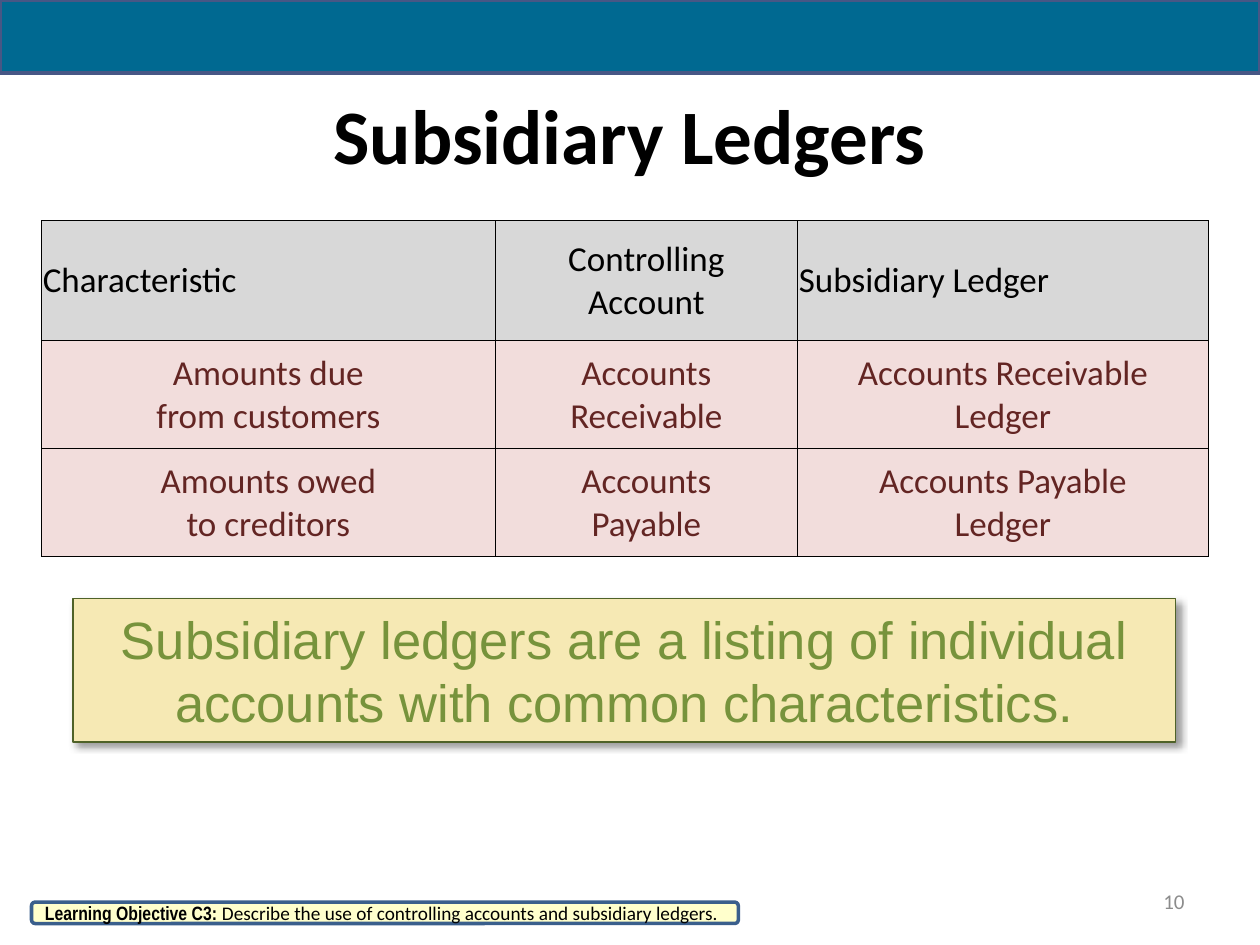
from lxml import etree
from pptx import Presentation
from pptx.dml.color import RGBColor
from pptx.enum.shapes import MSO_SHAPE
from pptx.enum.text import MSO_ANCHOR, PP_ALIGN
from pptx.oxml import parse_xml
from pptx.oxml.ns import nsdecls, qn
from pptx.util import Inches, Pt

RECTANGLE, ROUNDED = MSO_SHAPE.RECTANGLE, MSO_SHAPE.ROUNDED_RECTANGLE
LEFT, CENTER, RIGHT = PP_ALIGN.LEFT, PP_ALIGN.CENTER, PP_ALIGN.RIGHT
MIDDLE = MSO_ANCHOR.MIDDLE

BLACK = RGBColor(0x00, 0x00, 0x00)
GRAY = RGBColor(0x8C, 0x8C, 0x8C)
TEAL = RGBColor(0x00, 0x69, 0x91)
INDIGO = RGBColor(0x47, 0x57, 0x85)
BLUE = RGBColor(0x3A, 0x5F, 0x8C)
SILVER = RGBColor(0xD8, 0xD8, 0xD8)
PINK = RGBColor(0xF2, 0xDD, 0xDC)
MAROON = RGBColor(0x63, 0x25, 0x23)
SAND = RGBColor(0xF6, 0xE9, 0xB4)
OLIVE = RGBColor(0x4F, 0x62, 0x28)
GREEN = RGBColor(0x77, 0x93, 0x3C)
CREAM = RGBColor(0xFF, 0xFF, 0xCC)

LEDGER_ROWS = [
    [["Characteristic"], ["Controlling", "Account"], ["Subsidiary Ledger"]],
    [["Amounts due", "from customers"], ["Accounts", "Receivable"],
     ["Accounts Receivable", "Ledger"]],
    [["Amounts owed", "to creditors"], ["Accounts", "Payable"],
     ["Accounts Payable", "Ledger"]],
]


class SlideBuilder:
    font_name = "Calibri"
    unit = Inches(0.1)

    def __init__(self, slide):
        self.slide = slide

    def span(self, *units):
        return [round(value * self.unit) for value in units]

    def style(self, font, size, color, bold=False, name=None):
        font.name = name or self.font_name
        font.size = Pt(size)
        font.color.rgb = color
        font.bold = bold

    def frame(self, text_frame, margins):
        text_frame.word_wrap = True
        text_frame.vertical_anchor = MIDDLE
        (text_frame.margin_left, text_frame.margin_top,
         text_frame.margin_right, text_frame.margin_bottom) = self.span(*margins)
        return text_frame.paragraphs[0]

    def text(self, area, words, size, color, align, bold=False):
        box = self.slide.shapes.add_textbox(*self.span(*area))
        paragraph = self.frame(box.text_frame, (1, 0.5, 1, 0.5))
        paragraph.text = words
        paragraph.alignment = align
        self.style(paragraph.font, size, color, bold)

    def panel(self, kind, area, fill, line, width):
        shape = self.slide.shapes.add_shape(kind, *self.span(*area))
        shape.shadow.inherit = False
        shape.fill.solid()
        shape.fill.fore_color.rgb = fill
        shape.line.color.rgb = line
        shape.line.width = Pt(width)
        return shape

    def callout(self, area, words):
        shape = self.panel(RECTANGLE, area, SAND, OLIVE, 1)
        effects = shape._element.spPr.find(qn("a:effectLst"))
        shadow = etree.SubElement(
            effects, qn("a:outerShdw"), blurRad=str(Pt(4)), dist=str(Pt(3)),
            dir="2700000", algn="tl", rotWithShape="0")
        color = etree.SubElement(shadow, qn("a:srgbClr"), val=str(BLACK))
        etree.SubElement(color, qn("a:alpha"), val="40000")
        paragraph = self.frame(shape.text_frame, (1, 0.5, 1, 0.5))
        paragraph.text = words
        paragraph.alignment = CENTER
        self.style(paragraph.font, 30, GREEN, name="Arial")

    def objective(self, area, label, words):
        shape = self.panel(ROUNDED, area, CREAM, BLUE, 2)
        paragraph = self.frame(shape.text_frame, (1, 0, 0, 0))
        paragraph.alignment = LEFT
        for content, bold, name in ((label, True, "Arial Narrow"), (words, False, None)):
            run = paragraph.add_run()
            run.text = content
            self.style(run.font, 11, BLACK, bold, name)

    def border(self, cell):
        properties = cell._tc.get_or_add_tcPr()
        for side in ("lnL", "lnR", "lnT", "lnB"):
            properties.append(parse_xml(
                f'<a:{side} {nsdecls("a")} w="{Pt(0.5)}"><a:solidFill>'
                f'<a:srgbClr val="{BLACK}"/></a:solidFill></a:{side}>'))

    def cell(self, cell, lines, fill, color):
        self.border(cell)
        cell.fill.solid()
        cell.fill.fore_color.rgb = fill
        cell.vertical_anchor = MIDDLE
        cell.margin_left, cell.margin_top, cell.margin_right, cell.margin_bottom = (
            self.span(0.1, 0.1, 0.1, 0))
        cell.text_frame.text = "\n".join(lines)
        for paragraph in cell.text_frame.paragraphs:
            paragraph.alignment = CENTER if len(lines) > 1 else LEFT
            self.style(paragraph.font, 20, color)

    def table(self, left, top, widths, heights, rows):
        area = self.span(left, top, sum(widths), sum(heights))
        table = self.slide.shapes.add_table(len(rows), len(widths), *area).table
        table.horz_banding = False
        for column, width in zip(table.columns, self.span(*widths)):
            column.width = width
        for row, height in zip(table.rows, self.span(*heights)):
            row.height = height
        for index, row in enumerate(rows):
            fill, color = (PINK, MAROON) if index else (SILVER, BLACK)
            for column, lines in enumerate(row):
                self.cell(table.cell(index, column), lines, fill, color)


def main():
    presentation = Presentation()
    presentation.slide_width = Inches(10)
    presentation.slide_height = Inches(7.5)
    builder = SlideBuilder(presentation.slides.add_slide(presentation.slide_layouts[6]))
    builder.text((5, 5.8, 90, 9.7), "Subsidiary Ledgers", 44, BLACK, CENTER, True)
    builder.callout(
        (5.8, 47.5, 87.5, 11.4),
        "Subsidiary ledgers are a listing of individual accounts with common characteristics.")
    builder.table(3.3, 17.5, (36, 24, 32.6), (9.5, 8.6, 8.6), LEDGER_ROWS)
    builder.panel(RECTANGLE, (0, 0, 100, 5.8), TEAL, INDIGO, 2.25)
    builder.text((71.7, 69.5, 23.3, 4), "10", 12, GRAY, RIGHT)
    builder.objective(
        (2.5, 71.6, 56.1, 1.7), "Learning Objective C3: ",
        "Describe the use of controlling accounts and subsidiary ledgers.")
    presentation.save("out.pptx")


if __name__ == "__main__":
    main()
